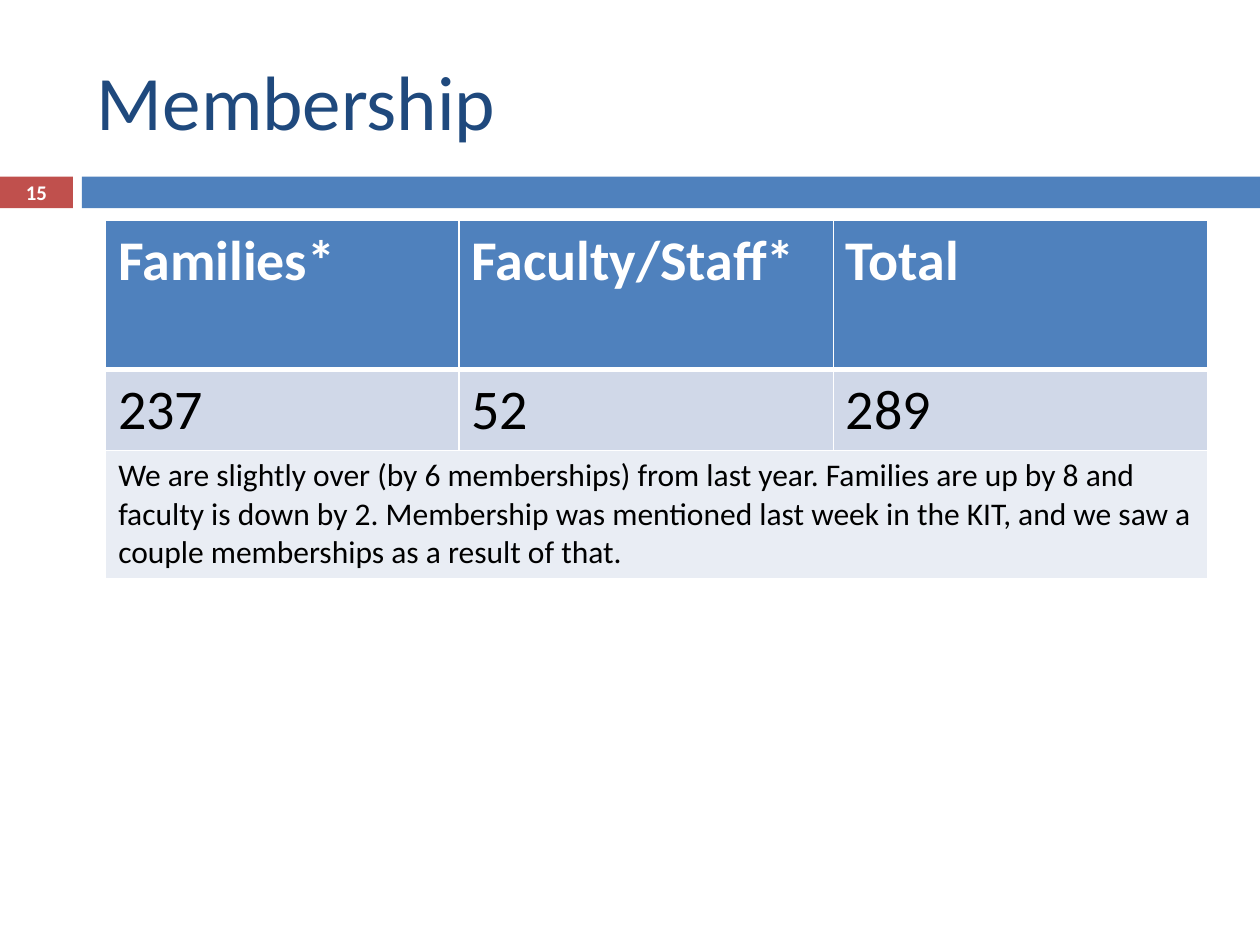
from dataclasses import dataclass

from lxml import etree
from pptx import Presentation
from pptx import util as u
from pptx.dml.color import RGBColor
from pptx.enum import shapes, text
from pptx.oxml.ns import qn


@dataclass(frozen=True)
class Theme:
    font: str = "Calibri"
    navy: str = "1F497D"
    blue: str = "4F81BD"
    red: str = "C0504D"
    white: str = "FFFFFF"
    black: str = "000000"
    band_dark: str = "D0D8E8"
    band_light: str = "E9EDF4"
    title_size: float = 44
    figure_size: float = 32
    note_size: float = 18
    number_size: float = 11.9
    rule: float = 1
    header_rule: float = 3


@dataclass(frozen=True)
class Box:
    left: float
    top: float
    width: float
    height: float

    def lengths(self) -> tuple:
        return tuple(u.Cm(v) for v in (self.left, self.top, self.width, self.height))


@dataclass(frozen=True)
class Row:
    texts: tuple
    height: float
    fill: str
    color: str
    size: float
    bold: bool = False
    top_rule: float = Theme.rule
    bottom_rule: float = Theme.rule


T = Theme()
WIDTH, HEIGHT = 25.4, 19.05
BAR_LEFT, BAR_TOP, BAR_HEIGHT = 1.65, 3.56, 0.64
NUMBER_BOX = Box(0, BAR_TOP, 1.47, BAR_HEIGHT)
BAR_BOX = Box(BAR_LEFT, BAR_TOP, WIDTH - BAR_LEFT, BAR_HEIGHT)
TITLE_BOX = Box(1.7, 0.64, 22.66, 2.74)
TABLE_LEFT, TABLE_TOP = 2.13, 4.45
COLUMNS = (7.12, 7.55, 7.55)
ROWS = (
    Row(("Families*", "Faculty/Staff*", "Total"), 3, T.blue, T.white,
        T.figure_size, bold=True, bottom_rule=T.header_rule),
    Row(("237", "52", "289"), 1.63, T.band_dark, T.black, T.figure_size,
        top_rule=T.header_rule),
    Row(("We are slightly over (by 6 memberships) from last year. Families are up "
         "by 8 and faculty is down by 2. Membership was mentioned last week in the "
         "KIT, and we saw a couple memberships as a result of that.",),
        2.56, T.band_light, T.black, T.note_size),
)


def write(tf, words: str, size: float, color: str, bold: bool = False,
          align=text.PP_ALIGN.LEFT) -> None:
    p = tf.paragraphs[0]
    p.text = words
    p.alignment = align
    p.font.name = T.font
    p.font.size = u.Pt(size)
    p.font.bold = bold
    p.font.color.rgb = RGBColor.from_string(color)


def add_bar(s, box: Box, color: str):
    sp = s.shapes.add_shape(shapes.MSO_SHAPE.RECTANGLE, *box.lengths())
    sp.shadow.inherit = False
    sp.fill.solid()
    sp.fill.fore_color.rgb = RGBColor.from_string(color)
    sp.line.fill.background()
    return sp


def set_borders(cell, top: float, bottom: float) -> None:
    tc_pr = cell._tc.get_or_add_tcPr()
    for side, width in (("L", T.rule), ("R", T.rule), ("T", top), ("B", bottom)):
        ln = etree.SubElement(tc_pr, qn(f"a:ln{side}"), w=str(u.Pt(width)))
        fill = etree.SubElement(ln, qn("a:solidFill"))
        etree.SubElement(fill, qn("a:srgbClr"), val=T.white)


def add_table(s) -> None:
    box = Box(TABLE_LEFT, TABLE_TOP, sum(COLUMNS), sum(r.height for r in ROWS))
    table = s.shapes.add_table(len(ROWS), len(COLUMNS), *box.lengths()).table
    for column, width in zip(table.columns, COLUMNS):
        column.width = u.Cm(width)
    for i, row in enumerate(ROWS):
        table.rows[i].height = u.Cm(row.height)
        for j in range(len(COLUMNS)):
            cell = table.cell(i, j)
            set_borders(cell, row.top_rule, row.bottom_rule)
            cell.fill.solid()
            cell.fill.fore_color.rgb = RGBColor.from_string(row.fill)
        for j, words in enumerate(row.texts):
            write(table.cell(i, j).text_frame, words, row.size, row.color, row.bold)
        # A single text spans the whole row
        if len(row.texts) == 1:
            table.cell(i, 0).merge(table.cell(i, len(COLUMNS) - 1))


def main() -> None:
    prs = Presentation()
    prs.slide_width, prs.slide_height = u.Cm(WIDTH), u.Cm(HEIGHT)
    s = prs.slides.add_slide(prs.slide_layouts[5])

    # Title
    title = s.shapes.title
    title.left, title.top, title.width, title.height = TITLE_BOX.lengths()
    title.text_frame.vertical_anchor = text.MSO_ANCHOR.MIDDLE
    write(title.text_frame, "Membership", T.title_size, T.navy)

    # Slide number and divider bar
    number = add_bar(s, NUMBER_BOX, T.red)
    tf = number.text_frame
    tf.margin_left = tf.margin_right = tf.margin_top = tf.margin_bottom = 0
    tf.vertical_anchor = text.MSO_ANCHOR.MIDDLE
    write(tf, "15", T.number_size, T.white, bold=True, align=text.PP_ALIGN.CENTER)
    add_bar(s, BAR_BOX, T.blue)

    # Membership figures
    add_table(s)
    prs.save("out.pptx")


if __name__ == "__main__":
    main()
